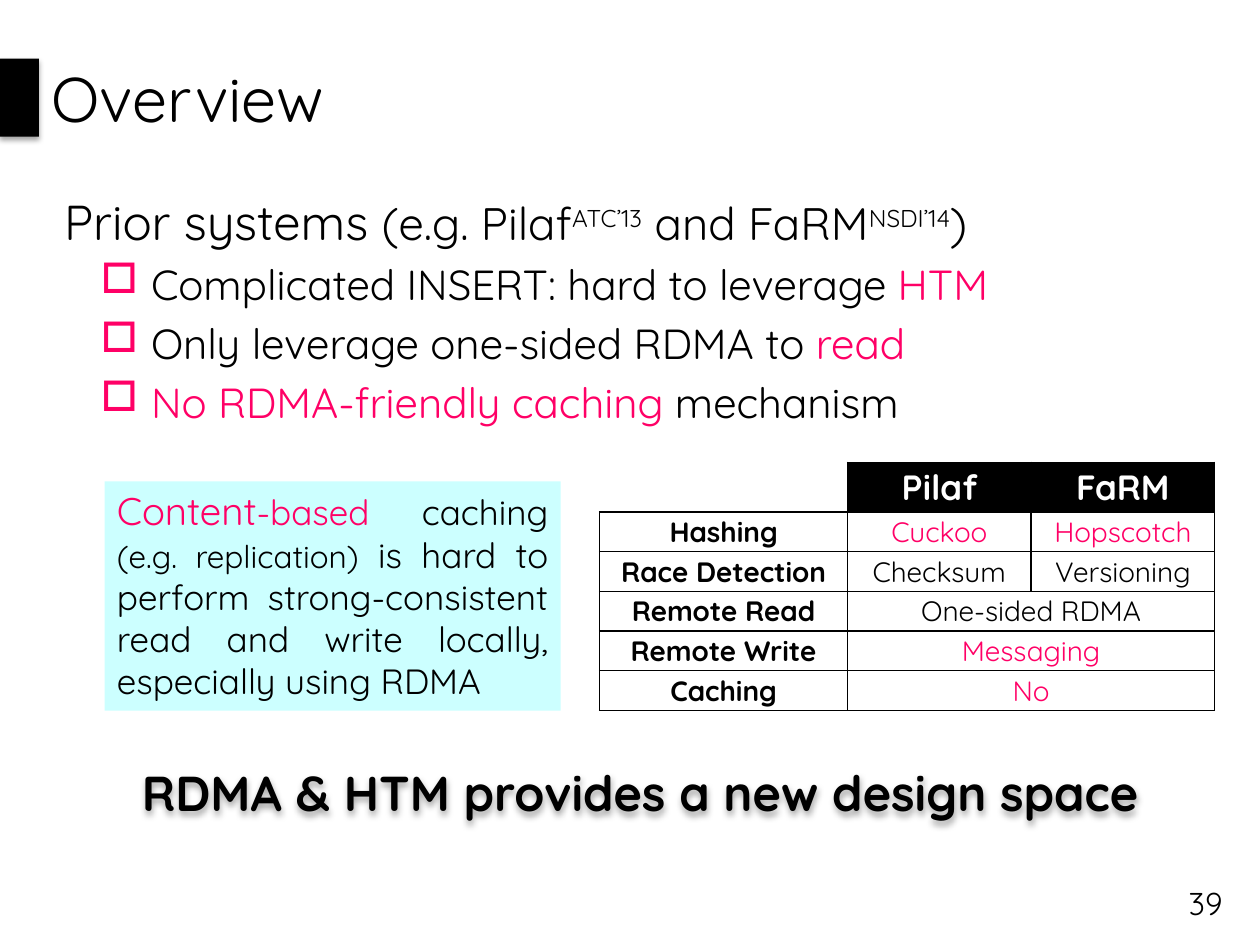
from dataclasses import dataclass

from lxml.etree import SubElement
from pptx import Presentation
from pptx.dml.color import RGBColor as Rgb
from pptx.enum.shapes import MSO_SHAPE as Shape
from pptx.enum.text import MSO_ANCHOR as Anchor, PP_ALIGN as Align
from pptx.oxml.ns import qn
from pptx.util import Inches, Pt


@dataclass(frozen=True)
class Theme:
    font: str = "Quicksand"
    black: str = "000000"
    white: str = "FFFFFF"
    accent: str = "FF0066"
    note_fill: str = "CCFFFF"
    title: int = 36
    lead: int = 28
    example: int = 26
    body: int = 24
    note_lead: int = 22
    note: int = 20
    small: int = 18
    cell: int = 16


@dataclass(frozen=True)
class Box:
    """A region, in percent of the slide's width and height."""
    left: float
    top: float
    width: float
    height: float

    def place(self):
        return (Inches(self.left * WIDTH / 100), Inches(self.top * HEIGHT / 100),
                Inches(self.width * WIDTH / 100), Inches(self.height * HEIGHT / 100))


THEME = Theme()
WIDTH, HEIGHT = 10, 7.5


def add_xml(parent, tag, **attributes):
    return SubElement(parent, qn(tag), {key: str(value) for key, value in attributes.items()})


def add_shadow(shape, blur, distance, alpha):
    """Cast a soft black shadow straight down; lengths in points, alpha in percent."""
    effects = add_xml(shape._element.spPr, "a:effectLst")
    shadow = add_xml(effects, "a:outerShdw", blurRad=int(Pt(blur)), dist=int(Pt(distance)),
                     dir=5400000, algn="t", rotWithShape=0)
    color = add_xml(shadow, "a:srgbClr", val=THEME.black)
    add_xml(color, "a:alpha", val=alpha * 1000)


def style_span(span, size, color=THEME.black, bold=False, raised=False):
    span.font.name, span.font.size, span.font.bold = THEME.font, Pt(size), bold
    span.font.color.rgb = Rgb.from_string(color)
    if raised:
        span.font._element.set("baseline", "30000")


def write_spans(para, spans, align=Align.LEFT):
    """Fill a paragraph from (text, size, color, bold, raised) tuples."""
    para.alignment = align
    for text, *style in spans:
        span = para.add_run()
        span.text = text
        style_span(span, *style)


def add_text(page, box, spans, align=Align.LEFT, anchor=Anchor.TOP):
    shape = page.shapes.add_textbox(*box.place())
    frame = shape.text_frame
    frame.word_wrap, frame.vertical_anchor = True, anchor
    write_spans(frame.paragraphs[0], spans, align)
    return shape


def add_panel(page, box, fill):
    shape = page.shapes.add_shape(Shape.RECTANGLE, *box.place())
    shape.fill.solid()
    shape.fill.fore_color.rgb = Rgb.from_string(fill)
    shape.line.fill.background()
    return shape


def set_indent(para, margin, hanging, bullet=None):
    props = para._p.get_or_add_pPr()
    props.set("marL", str(int(Inches(margin))))
    props.set("indent", str(-int(Inches(hanging))))
    add_xml(add_xml(props, "a:spcBef"), "a:spcPct", val=20000)
    if bullet:
        add_xml(add_xml(props, "a:buClr"), "a:srgbClr", val=THEME.accent)
        add_xml(props, "a:buChar", char=bullet)


def add_heading(page, box):
    bar = add_panel(page, Box(0, box.top + 0.3 * box.height, box.left, 0.4 * box.height),
                    THEME.black)
    add_shadow(bar, 3.1, 1.8, 35)
    add_text(page, box, [("Overview", THEME.title)], anchor=Anchor.MIDDLE)


def add_prior_systems(page, box):
    body, accent = THEME.body, THEME.accent
    lead = [("Prior systems ", THEME.lead), ("(e.g. Pilaf", THEME.example),
            ("ATC’13", body, THEME.black, False, True), (" and FaRM", THEME.example),
            ("NSDI’14", body, THEME.black, False, True), (")", THEME.example)]
    points = [
        [("Complicated INSERT: hard to leverage ", body), ("HTM", body, accent)],
        [("Only leverage one-sided RDMA to ", body), ("read", body, accent)],
        [("No RDMA-friendly caching ", body, accent), ("mechanism", body)],
    ]
    frame = add_text(page, box, lead).text_frame
    set_indent(frame.paragraphs[0], 0.19, 0.19)
    for spans in points:
        para = frame.add_paragraph()
        write_spans(para, spans)
        set_indent(para, 0.69, 0.4, "□")


def set_cell_borders(cell, sides):
    """Draw the given sides (of L, R, T, B) in black and hide the others."""
    props = cell._tc.get_or_add_tcPr()
    for index, side in enumerate("LRTB"):
        line = add_xml(props, f"a:ln{side}", w=int(Pt(1)))
        if side in sides:
            add_xml(add_xml(line, "a:solidFill"), "a:srgbClr", val=THEME.black)
        else:
            add_xml(line, "a:noFill")
        props.insert(index, line)


def add_comparison(page, box):
    """A text ending in * is in the accent colour; None joins the cell to its left."""
    rows = [
        ("", "Pilaf", "FaRM"),
        ("Hashing", "Cuckoo*", "Hopscotch*"),
        ("Race Detection", "Checksum", "Versioning"),
        ("Remote Read", "One-sided RDMA", None),
        ("Remote Write", "Messaging*", None),
        ("Caching", "No*", None),
    ]
    column_parts, row_parts = (27, 20, 20), (5, 4, 4, 4, 4, 4)
    left, top, width, height = box.place()
    table = page.shapes.add_table(len(rows), len(column_parts), left, top, width, height).table
    table.horz_banding = table.first_row = False
    for column, part in zip(table.columns, column_parts):
        column.width = width * part // sum(column_parts)
    for row, part in zip(table.rows, row_parts):
        row.height = height * part // sum(row_parts)
    for r, texts in enumerate(rows):
        for c, text in enumerate(texts):
            cell = table.cell(r, c)
            header, corner = r == 0 and c > 0, r == c == 0
            cell.fill.solid()
            cell.fill.fore_color.rgb = Rgb.from_string(THEME.black if header else THEME.white)
            set_cell_borders(cell, "RB" if corner else "LRTB")
            cell.vertical_anchor = Anchor.MIDDLE
            cell.margin_left = cell.margin_right = Inches(0.08)
            cell.margin_top = cell.margin_bottom = 0
            if text is None:
                table.cell(r, c - 1).merge(cell)
            elif text:
                color = (THEME.white if header else
                         THEME.accent if text.endswith("*") else THEME.black)
                size = THEME.note if header else THEME.cell
                write_spans(cell.text_frame.paragraphs[0],
                            [(text.rstrip("*"), size, color, header or c == 0)], Align.CENTER)


def add_caching_note(page, box):
    panel = add_panel(page, box, THEME.note_fill)
    panel.shadow.inherit = False
    frame = panel.text_frame
    frame.word_wrap, frame.vertical_anchor = True, Anchor.TOP
    write_spans(frame.paragraphs[0], [
        ("Content", THEME.note_lead, THEME.accent), ("-based ", THEME.note, THEME.accent),
        ("caching ", THEME.note), ("(e.g. replication)", THEME.small),
        (" is hard to perform strong-consistent read and write locally, "
         "especially using RDMA", THEME.note)], Align.JUSTIFY)


def add_conclusion(page, box):
    spans = [("RDMA & HTM provides a new design space", THEME.lead, THEME.black, True)]
    add_shadow(add_text(page, box, spans, Align.CENTER), 4, 2, 35)


def main():
    deck = Presentation()
    deck.slide_width, deck.slide_height = Inches(WIDTH), Inches(HEIGHT)
    page = deck.slides.add_slide(deck.slide_layouts[6])
    add_heading(page, Box(3.1, 0, 96.9, 20.67))
    add_prior_systems(page, Box(4.1, 19.6, 93.2, 43.73))
    add_comparison(page, Box(47.6, 48.93, 48.8, 26.27))
    add_caching_note(page, Box(8.3, 50.93, 36.2, 24.27))
    add_conclusion(page, Box(7.5, 80, 86.6, 7.6))
    add_text(page, Box(90.9, 92.93, 7.1, 5.33), [("39", THEME.small)],
             Align.RIGHT, Anchor.MIDDLE)
    deck.save("out.pptx")


if __name__ == "__main__":
    main()
